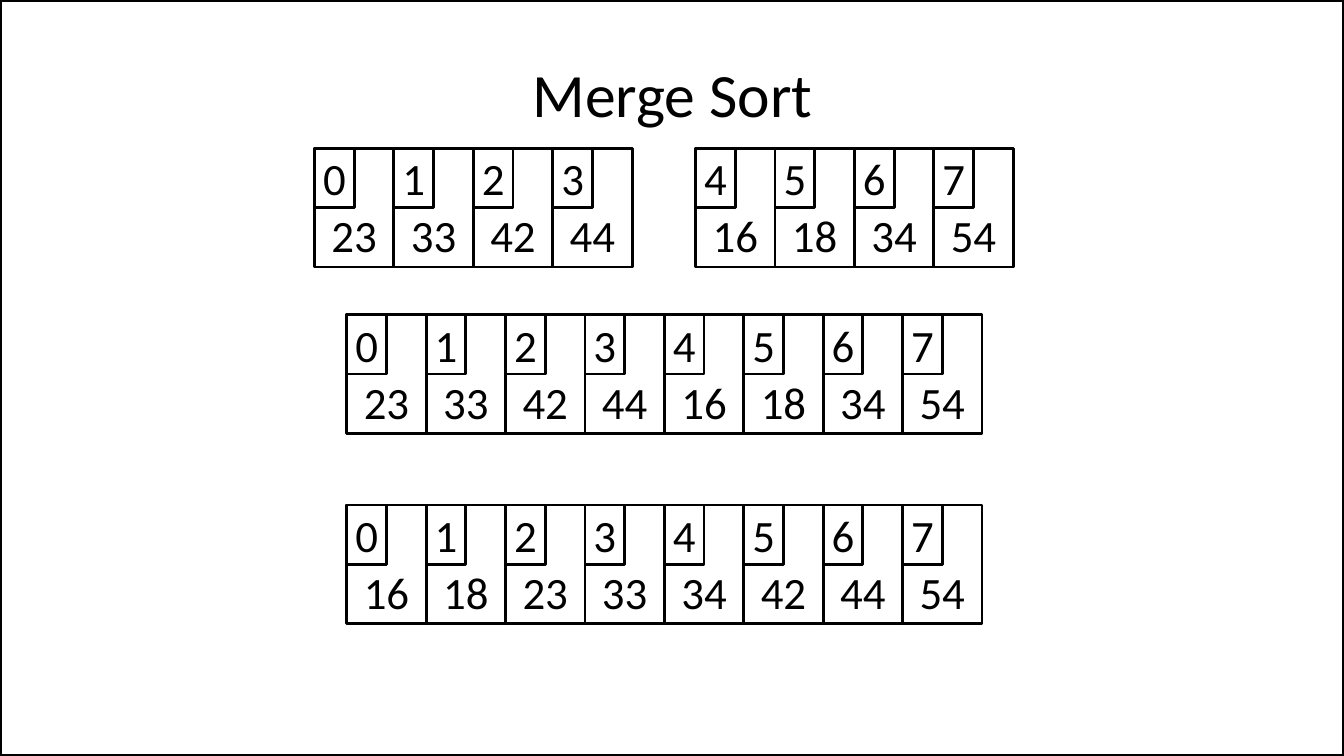
from dataclasses import dataclass

from pptx import Presentation
from pptx.dml.color import RGBColor
from pptx.enum.shapes import MSO_SHAPE as Shape
from pptx.enum.text import MSO_ANCHOR as Anchor, PP_ALIGN as Align
from pptx.util import Inches, Pt

SLIDE_WIDTH, SLIDE_HEIGHT = 13.33, 7.5
CELL_WIDTH, CELL_HEIGHT = 6.3 / 8, 1.18
MERGED_LEFT = 3.44
VALUE_INSET = 0.54  # pushes each value below its index box


@dataclass(frozen=True)
class Theme:
    font: str = "Calibri"
    ink: RGBColor = RGBColor(0, 0, 0)
    title_size: int = 44
    cell_size: int = 32
    frame_line: int = 3
    cell_line: int = 2


class SlideBuilder:
    def __init__(self, slide, theme):
        self.slide = slide
        self.theme = theme

    def add_label(self, box, text, size, top_inset=0):
        frame = box.text_frame
        frame.word_wrap = True
        frame.vertical_anchor = Anchor.MIDDLE
        frame.margin_left = frame.margin_right = frame.margin_bottom = 0
        frame.margin_top = Inches(top_inset)
        para = frame.paragraphs[0]
        para.alignment = Align.CENTER
        span = para.add_run()
        span.text = text
        span.font.name = self.theme.font
        span.font.size = Pt(size)
        span.font.color.rgb = self.theme.ink

    def title(self, text, left, top, width, height):
        box = self.slide.shapes.add_textbox(
            Inches(left), Inches(top), Inches(width), Inches(height))
        self.add_label(box, text, self.theme.title_size)

    def outline(self, left, top, width, height, line_width):
        box = self.slide.shapes.add_shape(
            Shape.RECTANGLE, Inches(left), Inches(top), Inches(width), Inches(height))
        box.shadow.inherit = False
        box.fill.background()
        box.line.color.rgb = self.theme.ink
        box.line.width = Pt(line_width)
        return box

    def array(self, left, top, values, first_index=0):
        """Draw a row of cells, each with its index boxed in the top-left quarter."""
        theme = self.theme
        for position, value in enumerate(values):
            x = left + position * CELL_WIDTH
            cell = self.outline(x, top, CELL_WIDTH, CELL_HEIGHT, theme.cell_line)
            self.add_label(cell, str(value), theme.cell_size, VALUE_INSET)
            index = self.outline(x, top, CELL_WIDTH / 2, CELL_HEIGHT / 2, theme.cell_line)
            self.add_label(index, str(first_index + position), theme.cell_size)


def main():
    deck = Presentation()
    deck.slide_width = Inches(SLIDE_WIDTH)
    deck.slide_height = Inches(SLIDE_HEIGHT)
    theme = Theme()
    page = SlideBuilder(deck.slides.add_slide(deck.slide_layouts[6]), theme)

    page.outline(0, 0, SLIDE_WIDTH, SLIDE_HEIGHT, theme.frame_line)
    page.title("Merge Sort", 0.67, 0.3, 12, 1.25)

    left_half = [23, 33, 42, 44]
    right_half = [16, 18, 34, 54]
    joined = left_half + right_half
    page.array(3.12, 1.47, left_half)
    page.array(6.9, 1.47, right_half, first_index=len(left_half))
    page.array(MERGED_LEFT, 3.12, joined)
    page.array(MERGED_LEFT, 5.01, sorted(joined))

    deck.save("out.pptx")


if __name__ == "__main__":
    main()
